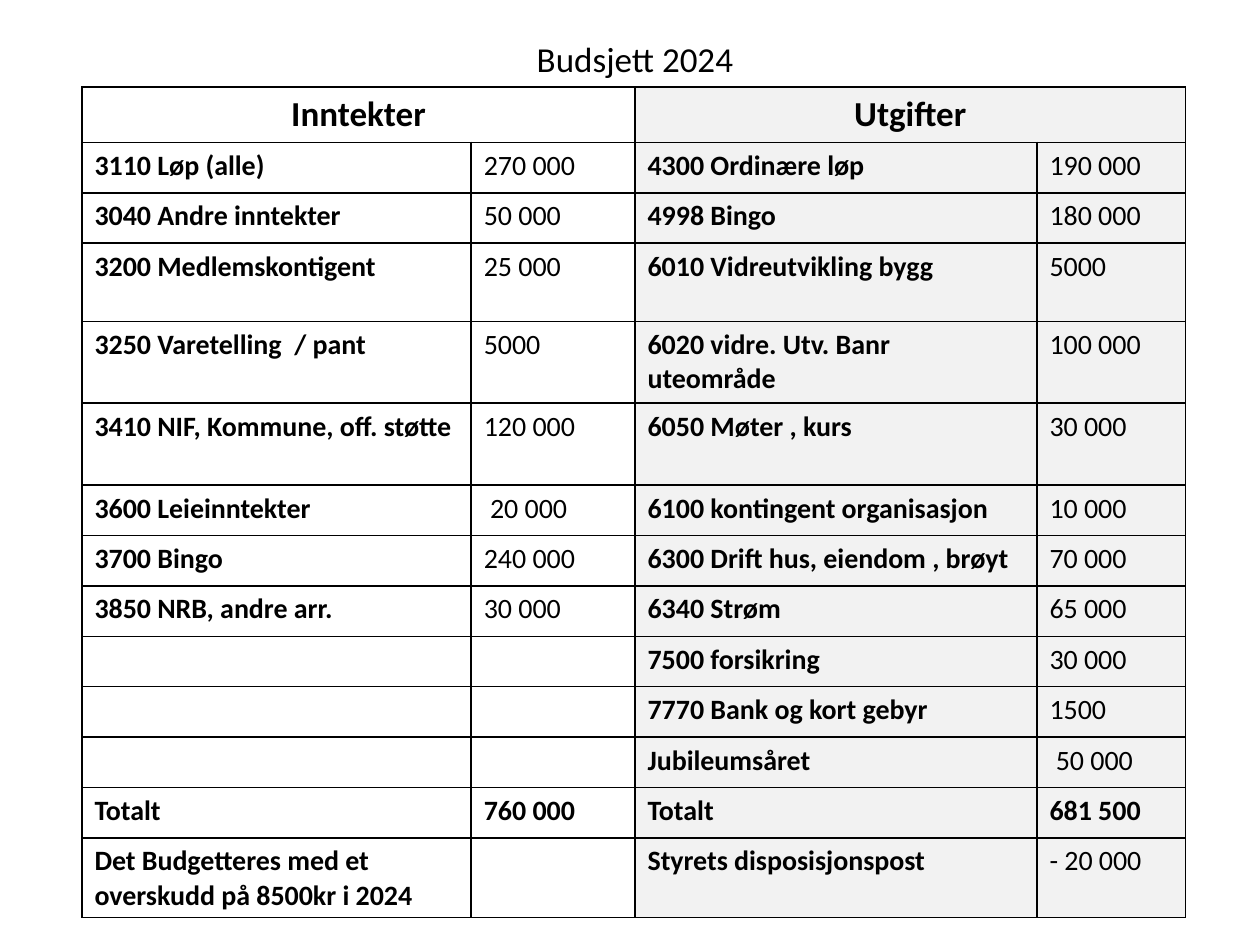
from dataclasses import dataclass

from lxml import etree
from pptx import Presentation
from pptx.dml.color import RGBColor
from pptx.enum.text import PP_ALIGN
from pptx.oxml.ns import qn
from pptx.table import _Cell
from pptx.text.text import TextFrame
from pptx.util import Inches, Pt

LEFT = PP_ALIGN.LEFT
CENTER = PP_ALIGN.CENTER


@dataclass(frozen=True)
class Theme:
    font: str = "Calibri"
    ink: str = "000000"
    expense_fill: str = "F2F2F2"
    heading_size: int = 20
    body_size: int = 16
    border_width: int = 1


@dataclass(frozen=True)
class BudgetRow:
    height: float
    income: str
    income_amount: str
    expense: str
    expense_amount: str
    total: bool = False


THEME = Theme()
COLUMN_WIDTHS = (3.09, 1.3, 3.19, 1.18)
HEADER_HEIGHT = 0.44
SINGLE = 0.4
DOUBLE = 0.62
TALL = 0.65

BUDGET = (
    BudgetRow(SINGLE, "3110 Løp (alle)", "270 000", "4300 Ordinære løp", "190 000"),
    BudgetRow(SINGLE, "3040 Andre inntekter", "50 000", "4998 Bingo", "180 000"),
    BudgetRow(DOUBLE, "3200 Medlemskontigent", "25 000", "6010 Vidreutvikling bygg", "5000"),
    BudgetRow(TALL, "3250 Varetelling  / pant", "5000", "6020 vidre. Utv. Banr uteområde", "100 000"),
    BudgetRow(TALL, "3410 NIF, Kommune, off. støtte", "120 000", "6050 Møter , kurs", "30 000"),
    BudgetRow(SINGLE, "3600 Leieinntekter", " 20 000", "6100 kontingent organisasjon", "10 000"),
    BudgetRow(SINGLE, "3700 Bingo", "240 000", "6300 Drift hus, eiendom , brøyt", "70 000"),
    BudgetRow(SINGLE, "3850 NRB, andre arr.", "30 000", "6340 Strøm", "65 000"),
    BudgetRow(SINGLE, "", "", "7500 forsikring", "30 000"),
    BudgetRow(SINGLE, "", "", "7770 Bank og kort gebyr", "1500"),
    BudgetRow(SINGLE, "", "", "Jubileumsåret", " 50 000"),
    BudgetRow(SINGLE, "Totalt", "760 000", "Totalt", "681 500", total=True),
    BudgetRow(DOUBLE, "Det Budgetteres med et overskudd på 8500kr i 2024", "",
              "Styrets disposisjonspost", "- 20 000"),
)


def write_text(frame: TextFrame, text: str, *, size: int = THEME.body_size,
               bold: bool = False, align: PP_ALIGN = LEFT) -> None:
    paragraph = frame.paragraphs[0]
    paragraph.alignment = align
    if not text:
        paragraph._p.get_or_add_endParaRPr().set("sz", str(size * 100))
        return
    run = paragraph.add_run()
    run.text = text
    run.font.name = THEME.font
    run.font.size = Pt(size)
    run.font.bold = bold
    run.font.color.rgb = RGBColor.from_string(THEME.ink)


def style_cell(cell: _Cell, is_expense: bool) -> None:
    properties = cell._tc.get_or_add_tcPr()
    for edge in ("a:lnL", "a:lnR", "a:lnT", "a:lnB"):
        border = etree.SubElement(properties, qn(edge), w=str(Pt(THEME.border_width)))
        stroke = etree.SubElement(border, qn("a:solidFill"))
        etree.SubElement(stroke, qn("a:srgbClr"), val=THEME.ink)
    if is_expense:
        cell.fill.solid()
        cell.fill.fore_color.rgb = RGBColor.from_string(THEME.expense_fill)
    else:
        cell.fill.background()


def add_title(slide) -> None:
    title = slide.shapes.add_textbox(Inches(3.27), Inches(0.25), Inches(3.54), Inches(0.44))
    title.text_frame.word_wrap = True
    write_text(title.text_frame, "Budsjett 2024", size=THEME.heading_size, align=CENTER)


def add_budget(slide) -> None:
    heights = [HEADER_HEIGHT, *(row.height for row in BUDGET)]
    budget = slide.shapes.add_table(
        len(heights), len(COLUMN_WIDTHS), Inches(0.65), Inches(0.69),
        Inches(sum(COLUMN_WIDTHS)), Inches(sum(heights))).table
    budget.first_row = False
    budget.horz_banding = False
    for column, width in zip(budget.columns, COLUMN_WIDTHS):
        column.width = Inches(width)
    for line, height in zip(budget.rows, heights):
        line.height = Inches(height)
        for index, cell in enumerate(line.cells):
            style_cell(cell, index >= 2)

    for start, heading in ((0, "Inntekter"), (2, "Utgifter")):
        header = budget.cell(0, start)
        header.merge(budget.cell(0, start + 1))
        write_text(header.text_frame, heading, size=THEME.heading_size, bold=True, align=CENTER)

    for row_index, row in enumerate(BUDGET, start=1):
        entries = (row.income, row.income_amount, row.expense, row.expense_amount)
        for index, entry in enumerate(entries):
            is_label = index % 2 == 0
            write_text(budget.cell(row_index, index).text_frame, entry,
                       bold=is_label or row.total)


def main() -> None:
    presentation = Presentation()
    presentation.slide_width = Inches(10)
    presentation.slide_height = Inches(7.5)
    slide = presentation.slides.add_slide(presentation.slide_layouts[6])
    add_title(slide)
    add_budget(slide)
    presentation.save("out.pptx")


if __name__ == "__main__":
    main()
